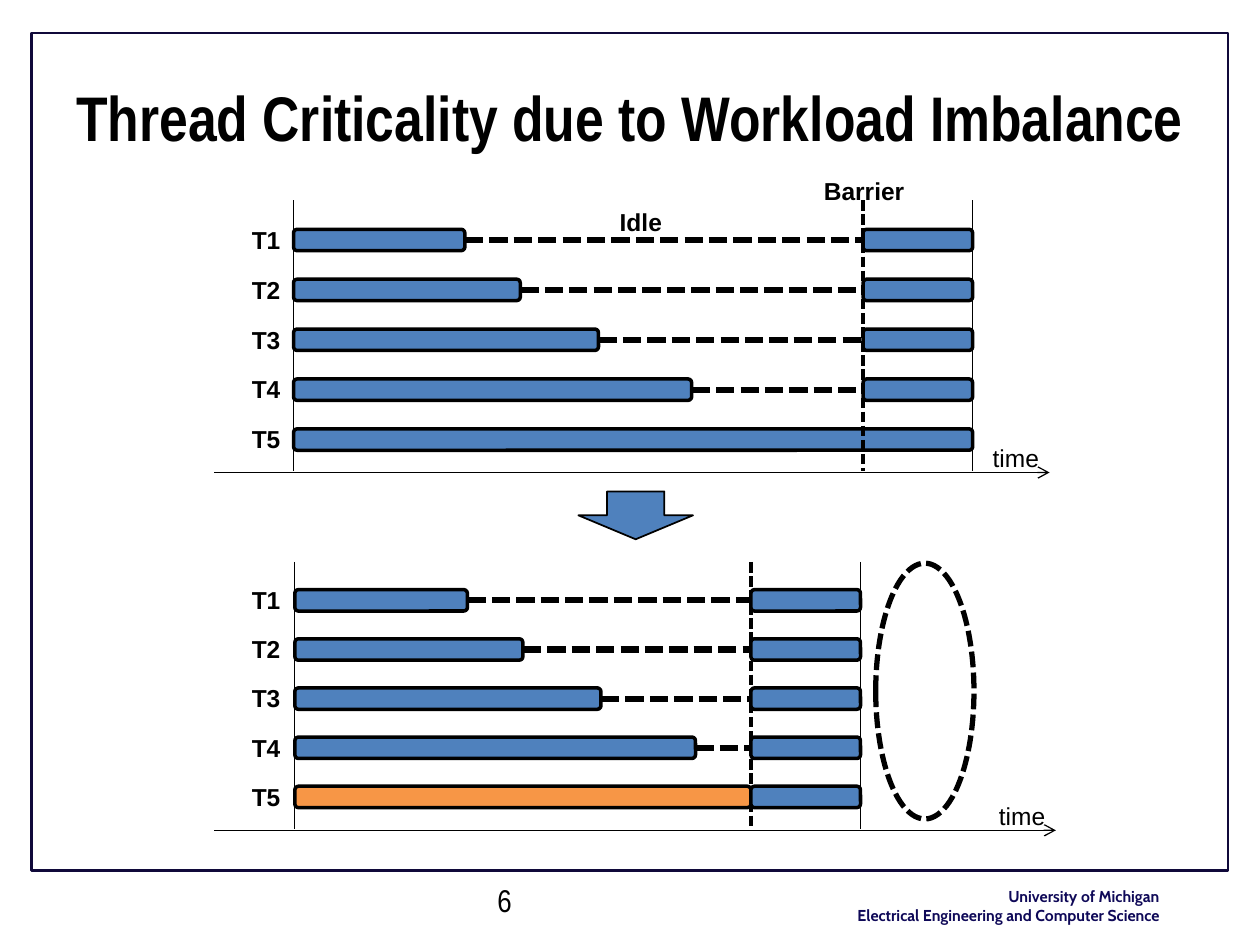
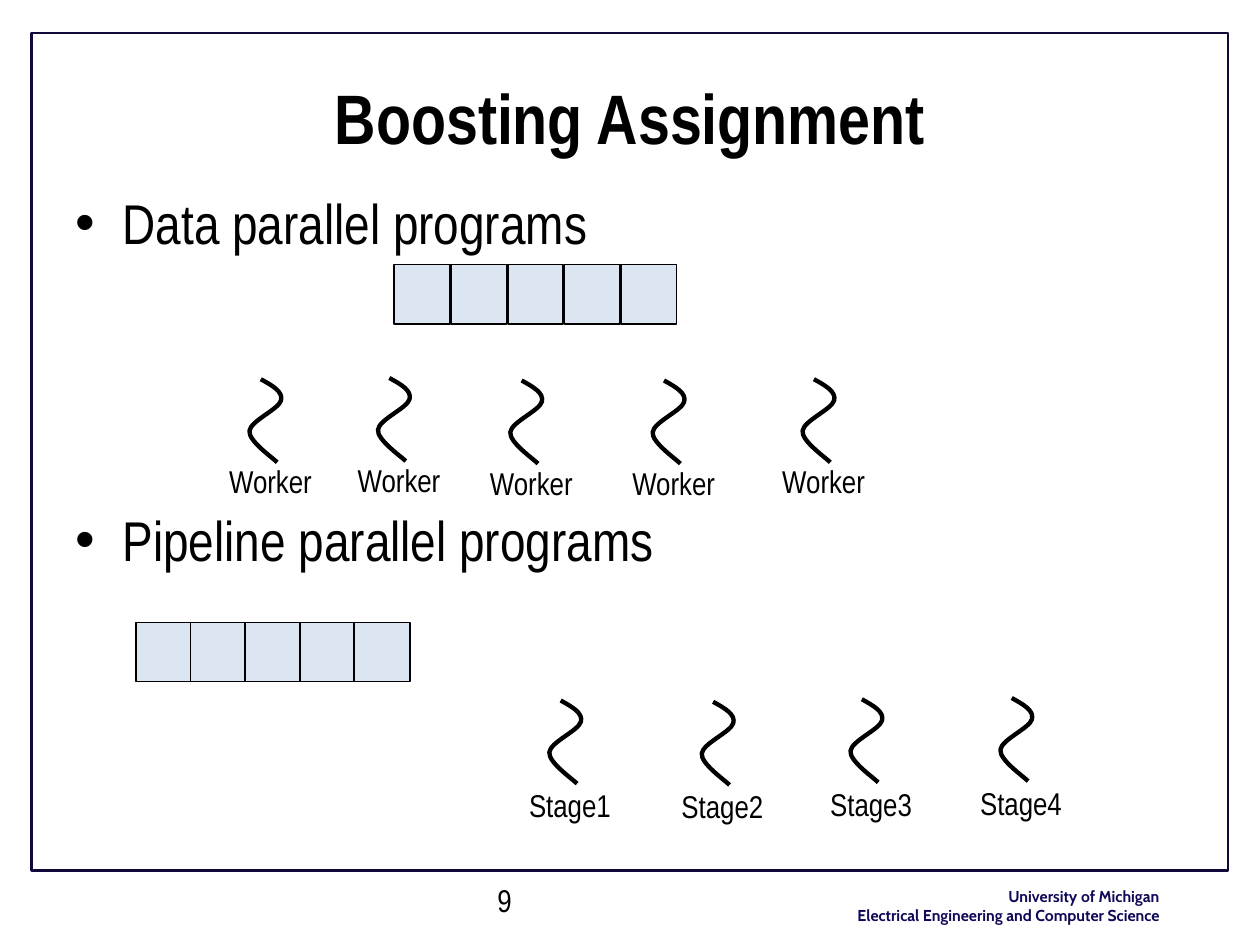
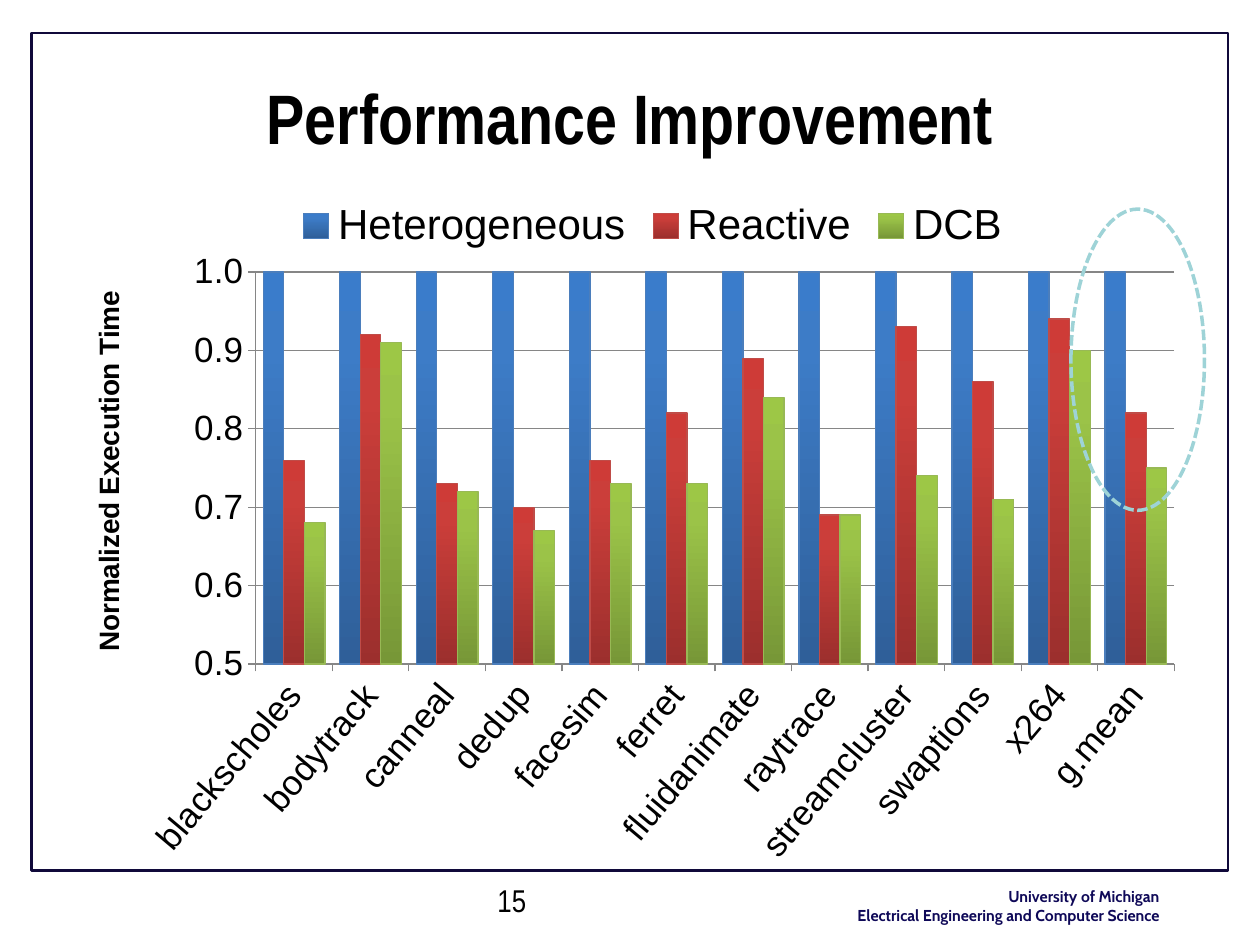
from copy import deepcopy
from dataclasses import dataclass
from typing import Any, NamedTuple, Optional

from lxml.etree import SubElement
from pptx import Presentation
from pptx.chart.data import CategoryChartData
from pptx.dml.color import RGBColor
from pptx.enum.chart import XL_CHART_TYPE as ChartType
from pptx.enum.chart import XL_LEGEND_POSITION as LegendPosition
from pptx.enum.chart import XL_TICK_MARK as TickMark
from pptx.enum.dml import MSO_LINE_DASH_STYLE as Dash
from pptx.enum.shapes import MSO_CONNECTOR as Connector
from pptx.enum.shapes import MSO_SHAPE as Preset
from pptx.enum.text import MSO_ANCHOR as Anchor
from pptx.enum.text import PP_ALIGN as Align
from pptx.oxml.ns import qn
from pptx.util import Emu, Inches, Pt

SLIDE_WIDTH, SLIDE_HEIGHT = Inches(10), Inches(7.5)
COLUMNS, ROWS = 100, 75

BLACK = RGBColor(0x00, 0x00, 0x00)
FRAME = RGBColor(0x10, 0x09, 0x3A)
FOOTER = RGBColor(0x0F, 0x09, 0x58)
BLUE = RGBColor(0x4F, 0x81, 0xBD)
ORANGE = RGBColor(0xF7, 0x96, 0x46)
PALE_BLUE = RGBColor(0xDC, 0xE6, 0xF2)
TEAL = RGBColor(0x9E, 0xD3, 0xD7)
GRID_GRAY = RGBColor(0x86, 0x86, 0x86)

SANS, NARROW, CABIN = "Arial", "Arial Narrow", "Cabin"


class Box(NamedTuple):
    left: float
    top: float
    width: float
    height: float


class Point(NamedTuple):
    column: float
    row: float


class Style(NamedTuple):
    size: float
    name: str = NARROW
    bold: bool = False
    color: RGBColor = BLACK


class Stroke(NamedTuple):
    width: float
    color: RGBColor = BLACK
    dash: Optional[Dash] = None


@dataclass(frozen=True)
class Timeline:
    start: float
    barrier: float
    finish: float
    top: float
    axis: float
    axis_end: float
    first_row: float
    pitch: float
    work_ends: tuple[float, ...]
    critical_fill: RGBColor


@dataclass(frozen=True)
class Series:
    name: str
    values: tuple[float, ...]
    gradient: tuple[str, str, str]
    outline: str


LABEL, PLAIN_LABEL = Style(14, SANS, True), Style(14, SANS)
THREAD_LABEL, BODY = Style(18), Style(32)
THIN, OUTLINE, BAR_OUTLINE = Stroke(0.75), Stroke(1), Stroke(2)
BARRIER, IDLE = Stroke(2, dash=Dash.SQUARE_DOT), Stroke(3.5, dash=Dash.SQUARE_DOT)

TIMELINES = (
    Timeline(23.3, 68.5, 77.2, 15.9, 37.5, 83.3, 18.2, 3.96,
             (36.9, 41.3, 47.5, 54.9, 77.2), BLUE),
    Timeline(23.4, 59.6, 68.3, 44.6, 65.9, 83.8, 46.8, 3.9,
             (37.1, 41.5, 47.7, 55.2, 59.6), ORANGE),
)
BAR_HEIGHT = 1.7

CURVE = (Point(1, 0), Point(1.9, 0.5), Point(2.8, 1), Point(2.6, 1.7),
         Point(2.4, 2.4), Point(0.2, 3.3), Point(0.1, 4.1),
         Point(0, 4.9), Point(1.9, 6.2), Point(2.3, 6.6))
WORKERS = (Point(19.7, 30.1), Point(29.9, 30), Point(40.4, 30.2),
           Point(51.7, 30.2), Point(63.6, 30.1))
STAGES = (Point(43.5, 55.6), Point(55.6, 55.7), Point(67.4, 55.5), Point(79.3, 55.4))

BENCHMARKS = ("blackscholes", "bodytrack", "canneal", "dedup", "facesim", "ferret",
              "fluidanimate", "raytrace", "streamcluster", "swaptions", "x264", "g.mean")
SERIES = (
    Series("Heterogeneous", (1,) * len(BENCHMARKS),
           ("2F5F99", "3D7CC7", "3A7CCB"), "4B7EBC"),
    Series("Reactive", (0.76, 0.92, 0.73, 0.7, 0.76, 0.82, 0.89, 0.69, 0.93, 0.86, 0.94, 0.82),
           ("9C2F2D", "CB3E3A", "CE3B37"), "BF4C48"),
    Series("DCB", (0.68, 0.91, 0.72, 0.67, 0.73, 0.73, 0.84, 0.69, 0.74, 0.71, 0.9, 0.75),
           ("779737", "9BC348", "9DC746"), "98B955"),
)
GRADIENT_POSITIONS = (0, 0.8, 1)


def column(value: float) -> Emu:
    return Emu(round(SLIDE_WIDTH * value / COLUMNS))


def row(value: float) -> Emu:
    return Emu(round(SLIDE_HEIGHT * value / ROWS))


def place(box: Box) -> tuple[Emu, Emu, Emu, Emu]:
    return column(box.left), row(box.top), column(box.width), row(box.height)


def apply(target: Any, values: dict[str, Any]) -> None:
    for name, value in values.items():
        setattr(target, name, value)


def style_font(font: Any, style: Style) -> None:
    apply(font, {"size": Pt(style.size), "name": style.name, "bold": style.bold})
    font.color.rgb = style.color


def style_line(line: Any, stroke: Stroke) -> None:
    line.color.rgb = stroke.color
    line.width = Pt(stroke.width)
    if stroke.dash is not None:
        line.dash_style = stroke.dash


def add_text(shapes: Any, box: Box, lines: tuple[str, ...], style: Style,
             align: Align = Align.LEFT, anchor: Anchor = Anchor.TOP, wrap: bool = True) -> Any:
    frame = shapes.add_textbox(*place(box)).text_frame
    apply(frame, {"word_wrap": wrap, "vertical_anchor": anchor})
    for index, text in enumerate(lines):
        paragraph = frame.add_paragraph() if index else frame.paragraphs[0]
        apply(paragraph, {"text": text, "alignment": align})
        style_font(paragraph.runs[0].font, style)
    return frame


def paint(shape: Any, stroke: Stroke, fill: Optional[RGBColor] = None) -> None:
    shape.shadow.inherit = False
    if fill is None:
        shape.fill.background()
    else:
        shape.fill.solid()
        shape.fill.fore_color.rgb = fill
    style_line(shape.line, stroke)


def add_preset(shapes: Any, preset: Preset, box: Box, stroke: Stroke,
               fill: Optional[RGBColor] = None) -> None:
    paint(shapes.add_shape(preset, *place(box)), stroke, fill)


def add_line(shapes: Any, start: Point, end: Point, stroke: Stroke, arrow: bool = False) -> None:
    line = shapes.add_connector(Connector.STRAIGHT, column(start.column), row(start.row),
                                column(end.column), row(end.row))
    style_line(line.line, stroke)
    properties = line._element.spPr
    if arrow:
        SubElement(properties.find(qn("a:ln")), qn("a:headEnd"), type="arrow")
    SubElement(properties, qn("a:effectLst"))


def add_base_slide(presentation: Any, title: str, number: int, title_size: float = 40) -> Any:
    slide = presentation.slides.add_slide(presentation.slide_layouts[6])
    shapes = slide.shapes
    add_text(shapes, Box(64, 69.9, 29, 4),
             ("University of Michigan", "Electrical Engineering and Computer Science"),
             Style(9, CABIN, True, FOOTER), Align.RIGHT, wrap=False)
    add_preset(shapes, Preset.RECTANGLE, Box(2.5, 2.6, 95, 66.5), Stroke(1.25, FRAME))
    add_text(shapes, Box(38.5, 69.4, 23.3, 4.4), (str(number),), Style(18))
    add_text(shapes, Box(5, 3, 90, 12.5), (title,), Style(title_size, bold=True),
             Align.CENTER, Anchor.MIDDLE)
    return shapes


def add_bar(shapes: Any, left: float, right: float, top: float, fill: RGBColor) -> None:
    add_preset(shapes, Preset.ROUNDED_RECTANGLE, Box(left, top, right - left, BAR_HEIGHT),
               BAR_OUTLINE, fill)


def add_upright(shapes: Any, timeline: Timeline, at: float, stroke: Stroke) -> None:
    add_line(shapes, Point(at, timeline.top), Point(at, timeline.axis - 0.1), stroke)


def add_timeline(shapes: Any, timeline: Timeline) -> None:
    for edge in (timeline.start, timeline.finish):
        add_upright(shapes, timeline, edge, THIN)
    add_line(shapes, Point(timeline.axis_end, timeline.axis), Point(17, timeline.axis),
             THIN, arrow=True)
    add_text(shapes, Box(timeline.axis_end - 5.5, timeline.axis - 2.8, 8.6, 3.4),
             ("time",), PLAIN_LABEL)

    tops = [timeline.first_row + index * timeline.pitch
            for index in range(len(timeline.work_ends))]
    for index, (top, work_end) in enumerate(zip(tops, timeline.work_ends), 1):
        fill = timeline.critical_fill if index == len(tops) else BLUE
        add_bar(shapes, timeline.start, work_end, top, fill)
        add_text(shapes, Box(19, top - 0.85, 7.4, 3.4), (f"T{index}",), LABEL)
        if work_end < timeline.barrier:
            middle = top + BAR_HEIGHT / 2
            add_line(shapes, Point(work_end, middle), Point(timeline.barrier, middle), IDLE)
    add_upright(shapes, timeline, timeline.barrier, BARRIER)
    for top, work_end in zip(tops, timeline.work_ends):
        if work_end <= timeline.barrier:
            add_bar(shapes, timeline.barrier, timeline.finish, top, BLUE)


def add_thread(shapes: Any, corner: Point, label: str, label_drop: float) -> None:
    members = shapes.add_group_shape().shapes
    points = [(column(corner.column + point.column), row(corner.row + point.row))
              for point in CURVE]
    builder = members.build_freeform(*points[0])
    builder.add_line_segments(points[1:], close=False)
    curve = builder.convert_to_shape()
    outline = curve._element.spPr.find(".//" + qn("a:path"))
    segments = outline.findall(qn("a:lnTo"))
    for first in range(0, len(segments), 3):
        bezier = SubElement(outline, qn("a:cubicBezTo"))
        for segment in segments[first:first + 3]:
            bezier.append(segment[0])
            outline.remove(segment)
    paint(curve, Stroke(2.5))
    add_text(members, Box(corner.column - 2.5, corner.row + label_drop, 8.9, 4),
             (label,), THREAD_LABEL)


def add_tiles(shapes: Any, corner: Point, pitch: float) -> None:
    for index in range(5):
        add_preset(shapes, Preset.RECTANGLE,
                   Box(corner.column + index * pitch, corner.row, 4.4, 4.7),
                   OUTLINE, PALE_BLUE)


def add_bullets(shapes: Any, lines: tuple[str, ...], gap: float) -> None:
    frame = add_text(shapes, Box(5, 14.5, 90, 52.8), lines, BODY)
    for index, paragraph in enumerate(frame.paragraphs):
        if index:
            paragraph.space_before = Pt(gap)
        properties = paragraph._p.get_or_add_pPr()
        properties.set("marL", str(column(3.75)))
        properties.set("indent", str(-column(3.75)))
        SubElement(properties, qn("a:buFont"), typeface=SANS)
        SubElement(properties, qn("a:buChar"), char="•")


def set_layout(parent: Any, after: Optional[str], shares: dict[str, float],
               inner: bool = False) -> None:
    for previous in parent.findall(qn("c:layout")):
        parent.remove(previous)
    layout = SubElement(parent, qn("c:layout"))
    if after is None:
        parent.insert(0, layout)
    else:
        parent.find(qn(after)).addnext(layout)
    manual = SubElement(layout, qn("c:manualLayout"))
    if inner:
        SubElement(manual, qn("c:layoutTarget"), val="inner")
    for mode in ("xMode", "yMode"):
        SubElement(manual, qn(f"c:{mode}"), val="edge")
    for name, share in shares.items():
        SubElement(manual, qn(f"c:{name}"), val=str(share))


def style_series(plotted: Any, series: Series) -> None:
    fill = plotted.format.fill
    fill.gradient()
    fill.gradient_angle = 90
    stop_list = plotted._element.find(".//" + qn("a:gsLst"))
    stop_list.append(deepcopy(stop_list[-1]))
    for stop, position, shade in zip(fill.gradient_stops, GRADIENT_POSITIONS, series.gradient):
        stop.position = position
        stop.color.rgb = RGBColor.from_string(shade)
    style_line(plotted.format.line, Stroke(0.75, RGBColor.from_string(series.outline)))
    plotted.invert_if_negative = False


def add_execution_chart(shapes: Any) -> None:
    data = CategoryChartData()
    data.categories = BENCHMARKS
    for series in SERIES:
        data.add_series(series.name, series.values)
    chart = shapes.add_chart(ChartType.COLUMN_CLUSTERED,
                             *place(Box(5, 13.1, 90, 56.6)), data).chart
    style_font(chart.font, Style(10))
    apply(chart, {"has_title": False, "has_legend": True})
    apply(chart.legend, {"position": LegendPosition.TOP, "include_in_layout": False})
    style_font(chart.legend.font, Style(24, SANS))
    set_layout(chart.legend._element, "c:legendPos", {"x": 0.2, "y": 0.04})

    plot = chart.plots[0]
    apply(plot, {"gap_width": 72, "overlap": 0, "vary_by_categories": False})
    for plotted, series in zip(plot.series, SERIES):
        style_series(plotted, series)

    values, categories = chart.value_axis, chart.category_axis
    apply(values, {"minimum_scale": 0.5, "maximum_scale": 1, "major_unit": 0.1,
                   "has_major_gridlines": True, "has_title": True})
    apply(values.tick_labels, {"number_format": "#,##0.0", "number_format_is_linked": False})
    style_line(values.major_gridlines.format.line, Stroke(0.75, GRID_GRAY))
    for axis in (values, categories):
        axis.major_tick_mark = TickMark.OUTSIDE
        style_font(axis.tick_labels.font, Style(20, SANS))
        style_line(axis.format.line, Stroke(0.75, GRID_GRAY))
    label_body = categories._element.find(qn("c:txPr")).find(qn("a:bodyPr"))
    label_body.set("rot", str(-50 * 60000))

    title = values.axis_title
    title.text_frame.text = "Normalized Execution Time"
    style_font(title.text_frame.paragraphs[0].runs[0].font, Style(16, SANS, True))
    set_layout(title._element, "c:tx", {"x": 0.02, "y": 0.17})
    set_layout(chart._chartSpace.find(".//" + qn("c:plotArea")), None,
               {"x": 0.17, "y": 0.15, "w": 0.81, "h": 0.55}, inner=True)


def build_criticality(presentation: Any) -> None:
    shapes = add_base_slide(presentation, "Thread Criticality due to Workload Imbalance", 6, 36)
    for timeline in TIMELINES:
        add_timeline(shapes, timeline)
    add_text(shapes, Box(48.2, 15.9, 7.4, 3.4), ("Idle",), LABEL)
    add_text(shapes, Box(64.4, 13.5, 8.6, 3.4), ("Barrier",), LABEL)
    add_preset(shapes, Preset.DOWN_ARROW, Box(45.9, 39, 9.1, 3.8), OUTLINE, BLUE)
    add_preset(shapes, Preset.OVAL, Box(69.5, 44.7, 7.8, 20.3),
               Stroke(3, dash=Dash.SQUARE_DOT))


def build_assignment(presentation: Any) -> None:
    shapes = add_base_slide(presentation, "Boosting Assignment", 9)
    add_bullets(shapes, ("Data parallel programs", "Pipeline parallel programs"), 142.5)
    add_tiles(shapes, Point(31.3, 21), 4.5)
    for corner in WORKERS:
        add_thread(shapes, corner, "Worker", 6.1)
    add_tiles(shapes, Point(10.8, 49.4), 4.33)
    for number, corner in enumerate(STAGES, 1):
        add_thread(shapes, corner, f"Stage{number}", 6.3)


def build_performance(presentation: Any) -> None:
    shapes = add_base_slide(presentation, "Performance Improvement", 15)
    add_execution_chart(shapes)
    add_preset(shapes, Preset.OVAL, Box(85, 16.6, 10.6, 23.9),
               Stroke(2, TEAL, Dash.SQUARE_DOT))


def main() -> None:
    presentation = Presentation()
    apply(presentation, {"slide_width": SLIDE_WIDTH, "slide_height": SLIDE_HEIGHT})
    for build in (build_criticality, build_assignment, build_performance):
        build(presentation)
    presentation.save("out.pptx")


if __name__ == "__main__":
    main()
